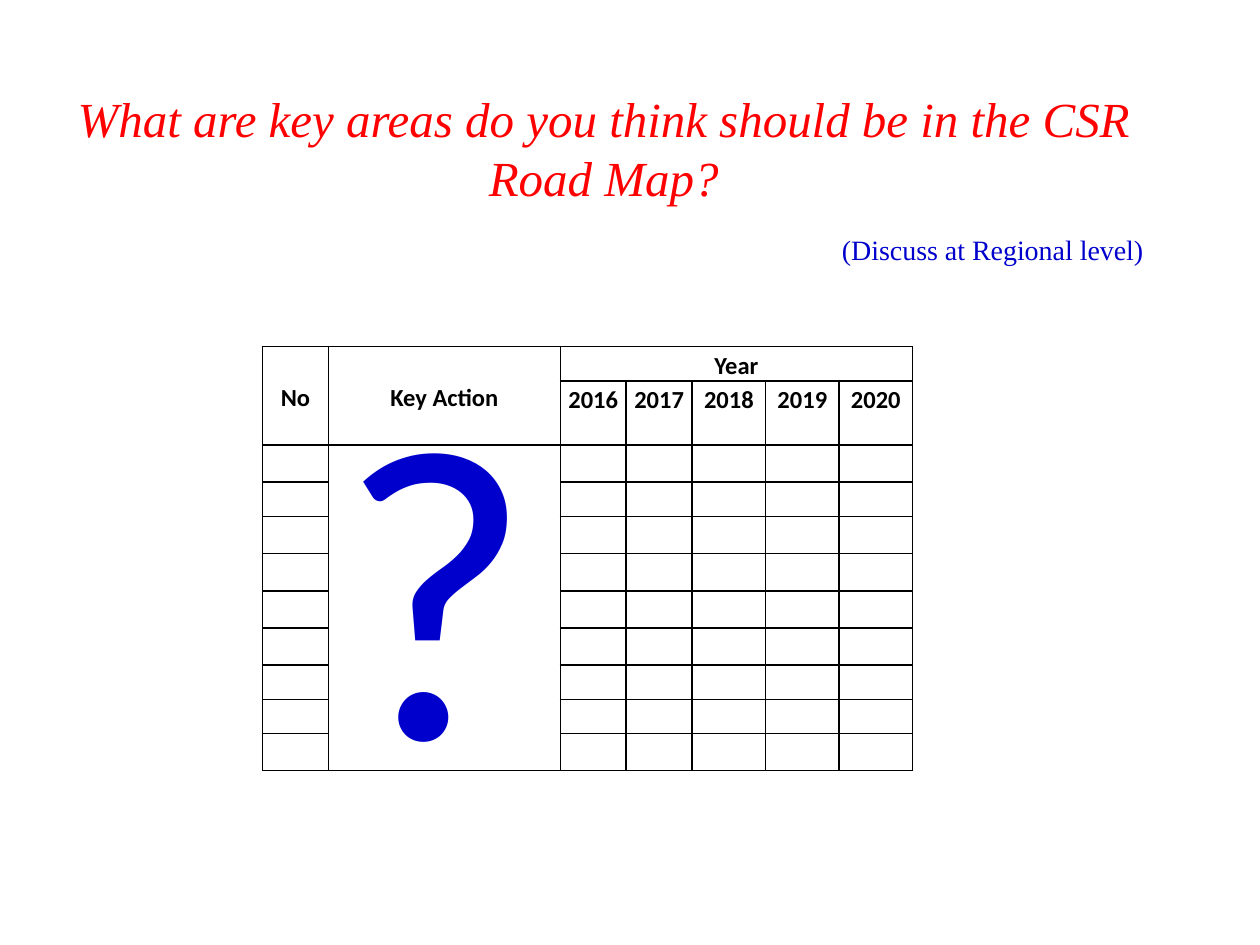
from lxml.etree import SubElement
from pptx import Presentation
from pptx.dml.color import RGBColor
from pptx.enum.text import MSO_ANCHOR, PP_ALIGN
from pptx.oxml.ns import qn
from pptx.util import Pt

COLORS = {"title": "FF0000", "accent": "0000CC", "ink": "000000"}
COLUMN_WIDTHS = [37.7, 132.5, 37.7, 37.7, 42, 42, 42]
ROW_HEIGHTS = [19.6, 36.8, 21.2, 19.7, 21.2, 21.2, 21.2, 21.2, 19.7, 19.6, 21.2]
YEARS = range(2016, 2021)
FIRST_YEAR_COLUMN = 2


def style_paragraph(para, size, font, color, bold=None, italic=None):
    for span in para.runs:
        span.font.size = Pt(size)
        span.font.name = font
        span.font.bold = bold
        span.font.italic = italic
        span.font.color.rgb = RGBColor.from_string(COLORS[color])


def add_text(page, box, text, size, font, color, italic=None,
             align=PP_ALIGN.CENTER, anchor=MSO_ANCHOR.MIDDLE):
    frame = page.shapes.add_textbox(*map(Pt, box)).text_frame
    frame.word_wrap = True
    frame.vertical_anchor = anchor
    frame.text = text
    para = frame.paragraphs[0]
    para.alignment = align
    style_paragraph(para, size, font, color, italic=italic)
    return para


def add_heading(page, box):
    left, top, width, height = box
    add_text(page, (left, top, width - 30, 48),
             "What are key areas do you think should be in the CSR Road Map?",
             28, "Times New Roman", "title", italic=True)
    note = add_text(page, (left + width - 246, top + height - 36, 246, 36),
                    "(Discuss at Regional level)", 16, "Times New Roman", "accent",
                    align=PP_ALIGN.LEFT, anchor=MSO_ANCHOR.TOP)
    note.line_spacing = 1.5
    note._p.get_or_add_pPr().set("marL", str(Pt(36)))


def format_cell(cell):
    """Clear the cell's fill, tighten its margins and draw thin borders."""
    cell.margin_left = cell.margin_right = Pt(3.6)
    cell.margin_top = cell.margin_bottom = 0
    properties = cell._tc.get_or_add_tcPr()
    for side in ("a:lnL", "a:lnR", "a:lnT", "a:lnB"):
        line = SubElement(properties, qn(side), w=str(Pt(1)))
        fill = SubElement(line, qn("a:solidFill"))
        SubElement(fill, qn("a:srgbClr"), val=COLORS["ink"])
    cell.fill.background()
    # Small empty paragraphs keep the rows from growing.
    end = SubElement(cell.text_frame.paragraphs[0]._p, qn("a:endParaRPr"))
    end.set("sz", "1000")


def write_header(cell, text, anchor=MSO_ANCHOR.TOP):
    cell.text = text
    cell.vertical_anchor = anchor
    para = cell.text_frame.paragraphs[0]
    para.alignment = PP_ALIGN.CENTER
    para.line_spacing = 1.15
    style_paragraph(para, 14, "Calibri", "ink", bold=True)


def add_action_plan(page, box):
    frame = page.shapes.add_table(len(ROW_HEIGHTS), len(COLUMN_WIDTHS), *map(Pt, box))
    table = frame.table
    table.first_row = table.horz_banding = False
    for column, width in zip(table.columns, COLUMN_WIDTHS):
        column.width = Pt(width)
    for row, height in zip(table.rows, ROW_HEIGHTS):
        row.height = Pt(height)
    for cell in table.iter_cells():
        format_cell(cell)

    last_row, last_column = len(ROW_HEIGHTS) - 1, len(COLUMN_WIDTHS) - 1
    for column, label in enumerate(("No", "Key Action")):
        table.cell(0, column).merge(table.cell(1, column))
        write_header(table.cell(0, column), label, MSO_ANCHOR.MIDDLE)
    table.cell(0, FIRST_YEAR_COLUMN).merge(table.cell(0, last_column))
    write_header(table.cell(0, FIRST_YEAR_COLUMN), "Year")
    for column, year in enumerate(YEARS, FIRST_YEAR_COLUMN):
        write_header(table.cell(1, column), str(year))
    table.cell(2, 1).merge(table.cell(last_row, 1))

    left, top = box[:2]
    add_text(page, (left - 30, top + 36, 258, 186), "?", 239, "Calibri", "accent")


def main():
    deck = Presentation()
    deck.slide_width, deck.slide_height = Pt(720), Pt(540)
    page = deck.slides.add_slide(deck.slide_layouts[6])
    add_heading(page, (36, 60, 648, 96))
    add_action_plan(page, (150, 198, sum(COLUMN_WIDTHS), sum(ROW_HEIGHTS)))
    deck.save("out.pptx")


if __name__ == "__main__":
    main()
